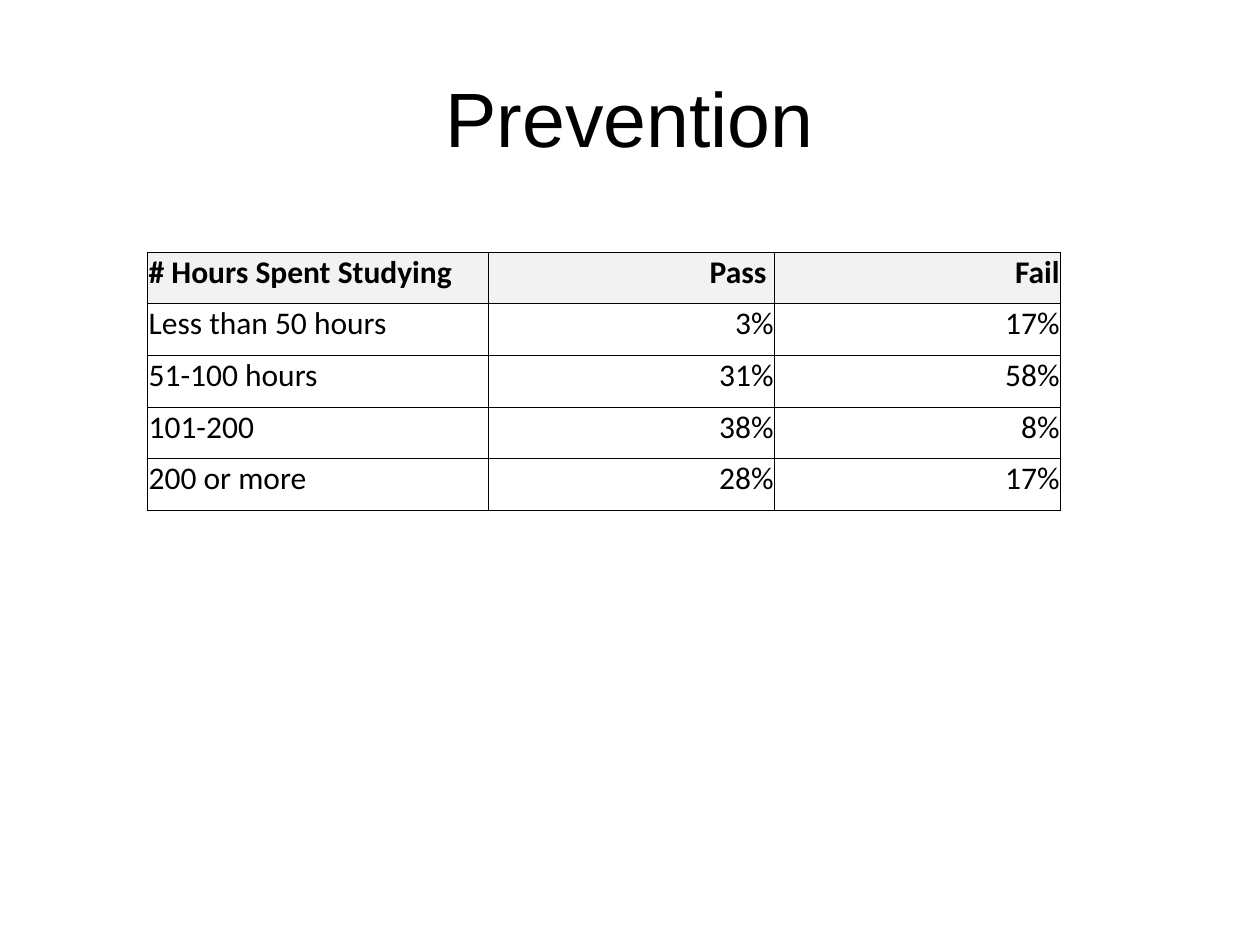
from lxml import etree
from pptx import Presentation
from pptx.dml.color import RGBColor
from pptx.enum import text
from pptx.oxml import ns
from pptx.util import Inches, Pt

TITLE = "Prevention"
ROWS = [
    ("# Hours Spent Studying", "Pass ", "Fail"),
    ("Less than 50 hours", "3%", "17%"),
    ("51-100 hours", "31%", "58%"),
    ("101-200", "38%", "8%"),
    ("200 or more", "28%", "17%"),
]
COLUMN_WIDTHS = (2.71, 2.27, 2.27)
ROW_HEIGHT = 0.41
BLACK = "000000"
HEADER_FILL = "F2F2F2"


def color(value):
    return RGBColor.from_string(value)


def write(frame, content, font_name, size, alignment, bold=False):
    frame.text = content
    paragraph = frame.paragraphs[0]
    paragraph.alignment = alignment
    font = paragraph.runs[0].font
    font.name, font.size, font.bold = font_name, Pt(size), bold
    font.color.rgb = color(BLACK)


def add_borders(cell):
    properties = cell._tc.get_or_add_tcPr()
    for index, side in enumerate(("a:lnL", "a:lnR", "a:lnT", "a:lnB")):
        line = etree.Element(ns.qn(side), w=str(Pt(0.5)))
        fill = etree.SubElement(line, ns.qn("a:solidFill"))
        etree.SubElement(fill, ns.qn("a:srgbClr"), val=BLACK)
        properties.insert(index, line)


def add_title(slide):
    box = slide.shapes.add_textbox(Inches(0.5), Inches(0.3), Inches(9), Inches(1.25))
    frame = box.text_frame
    frame.word_wrap = True
    frame.vertical_anchor = text.MSO_ANCHOR.MIDDLE
    frame.margin_left = frame.margin_right = Inches(0.1)
    frame.margin_top = frame.margin_bottom = Inches(0.1)
    write(frame, TITLE, "Arial", 44, text.PP_ALIGN.CENTER)


def add_results(slide):
    table = slide.shapes.add_table(
        len(ROWS), len(COLUMN_WIDTHS), Inches(1.17), Inches(2),
        Inches(sum(COLUMN_WIDTHS)), Inches(ROW_HEIGHT * len(ROWS)),
    ).table
    table.first_row = table.horz_banding = False
    for column, width in zip(table.columns, COLUMN_WIDTHS):
        column.width = Inches(width)
    for row_index, values in enumerate(ROWS):
        table.rows[row_index].height = Inches(ROW_HEIGHT)
        for column_index, value in enumerate(values):
            cell = table.cell(row_index, column_index)
            is_header = row_index == 0
            alignment = text.PP_ALIGN.RIGHT if column_index else text.PP_ALIGN.LEFT
            write(cell.text_frame, value, "Calibri", 18, alignment, is_header)
            cell.margin_left = cell.margin_right = cell.margin_top = Inches(0.01)
            cell.margin_bottom = 0
            if is_header:
                cell.fill.solid()
                cell.fill.fore_color.rgb = color(HEADER_FILL)
            else:
                cell.fill.background()
            add_borders(cell)


def main():
    presentation = Presentation()
    presentation.slide_width, presentation.slide_height = Inches(10), Inches(7.5)
    slide = presentation.slides.add_slide(presentation.slide_layouts[6])
    add_title(slide)
    add_results(slide)
    presentation.save("out.pptx")


if __name__ == "__main__":
    main()
